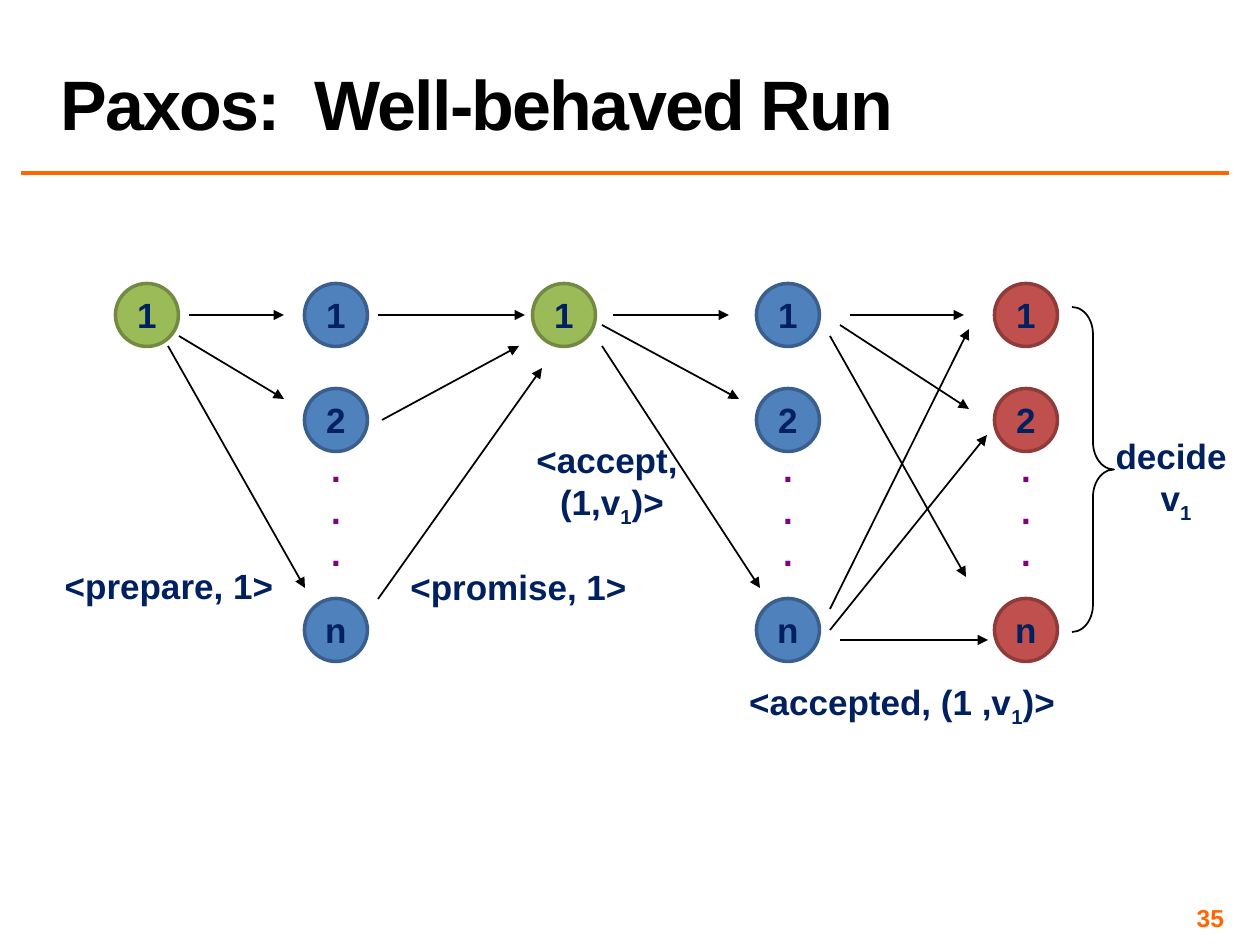
from lxml import etree
from pptx import Presentation
from pptx.dml.color import RGBColor
from pptx.enum.shapes import MSO_CONNECTOR, MSO_SHAPE
from pptx.enum.text import MSO_ANCHOR, MSO_AUTO_SIZE, PP_ALIGN
from pptx.oxml.ns import qn
from pptx.util import Pt

STRAIGHT = MSO_CONNECTOR.STRAIGHT
OVAL, BRACE = MSO_SHAPE.OVAL, MSO_SHAPE.RIGHT_BRACE
TOP, MIDDLE, BOTTOM = MSO_ANCHOR.TOP, MSO_ANCHOR.MIDDLE, MSO_ANCHOR.BOTTOM
LEFT, CENTER, RIGHT = PP_ALIGN.LEFT, PP_ALIGN.CENTER, PP_ALIGN.RIGHT
GROW, FIXED = MSO_AUTO_SIZE.SHAPE_TO_FIT_TEXT, MSO_AUTO_SIZE.NONE

SCALE = 914400 / 126
NAVY, BLACK, ORANGE, PURPLE = "002060", "000000", "FF6600", "800080"
GREEN, BLUE, RED = ("9BBB59", "738A42"), ("4F81BD", "3A5F8C"), ("C0504D", "8E3B39")
DISC = 63
ROWS = {"1": 315, "2": 420, "n": 630}


def emu(*lengths):
    return [round(n * SCALE) for n in lengths]


def color(code):
    return RGBColor.from_string(code)


def assign(target, values):
    for name, value in values.items():
        setattr(target, name, value)


class Board:
    """Holds the text style and the current slide."""

    def __init__(self, slide):
        self.shapes = slide.shapes
        self.font = {"name": "Arial", "size": Pt(20), "bold": True}

    def label(self, shape, lines, code=NAVY, align=CENTER, size=20, track=0,
              space=None, **frame):
        """Fill a shape with lines; the letter after an underscore is a subscript."""
        body = shape.text_frame
        assign(body, frame)
        for i, line in enumerate(lines):
            para = body.paragraphs[0] if i == 0 else body.add_paragraph()
            assign(para, {"alignment": align, "line_spacing": space})
            first, *rest = line.split("_")
            runs = [(first, False)]
            for part in rest:
                runs += [(part[0], True), (part[1:], False)]
            for text, sub in runs:
                if not text:
                    continue
                run = para.add_run()
                run.text = text
                assign(run.font, {**self.font, "size": Pt(size)})
                run.font.color.rgb = color(code)
                props = run._r.get_or_add_rPr()
                if sub:
                    props.set("baseline", "-25000")
                if track:
                    props.set("spc", str(track))

    def text(self, box, *lines, **style):
        frame = {"word_wrap": False, "auto_size": GROW, "vertical_anchor": TOP}
        self.label(self.shapes.add_textbox(*emu(*box)), lines, **{**frame, **style})

    def line(self, start, end, code=BLACK, width=1, head=True):
        link = self.shapes.add_connector(STRAIGHT, *emu(*start, *end))
        link.line.color.rgb = color(code)
        link.line.width = Pt(width)
        if head:
            etree.SubElement(link.line._get_or_add_ln(), qn("a:tailEnd"), type="triangle")
        etree.SubElement(link._element.spPr, qn("a:effectLst"))

    def disc(self, x, y, name, tint):
        """Draw a labelled node centred on x, y."""
        fill, edge = tint
        half = DISC / 2
        node = self.shapes.add_shape(OVAL, *emu(x - half, y - half, DISC, DISC))
        node.shadow.inherit = False
        node.fill.solid()
        node.fill.fore_color.rgb = color(fill)
        node.line.color.rgb = color(edge)
        node.line.width = Pt(2)
        self.label(node, [name], word_wrap=False, vertical_anchor=MIDDLE)

    def column(self, x, tint):
        for name, y in ROWS.items():
            self.disc(x, y, name, tint)
        self.text((x - 21, 441, 42, 139), ".", ".", ".", code=PURPLE, word_wrap=True)

    def brace(self, box):
        shape = self.shapes.add_shape(BRACE, *emu(*box))
        shape.adjustments[0] = 0.65
        shape.shadow.inherit = False
        shape.fill.background()
        shape.line.color.rgb = color(BLACK)
        shape.line.width = Pt(1)


ARROWS = [
    # prepare
    ((189, 315), (284, 315)), ((179, 336), (284, 399)), ((168, 346), (305, 588)),
    # promise
    ((378, 599), (542, 368)), ((382, 420), (519, 346)), ((378, 315), (525, 315)),
    # accept
    ((613, 315), (729, 315)), ((602, 325), (739, 399)), ((602, 346), (760, 588)),
    # accepted
    ((830, 336), (966, 577)), ((840, 325), (969, 409)), ((850, 315), (964, 315)),
    ((840, 640), (988, 640)), ((830, 609), (969, 329)), ((830, 630), (987, 435)),
]


def main():
    deck = Presentation()
    deck.slide_width, deck.slide_height = emu(1260, 945)
    board = Board(deck.slides.add_slide(deck.slide_layouts[6]))

    board.line((21, 173), (1229, 173), ORANGE, 2, head=False)
    inset = emu(5)[0]
    sides = ("left", "right", "top", "bottom")
    board.text((935, 903, 294, 29), "35", code=ORANGE, align=RIGHT, size=14,
               word_wrap=True, auto_size=FIXED, vertical_anchor=MIDDLE,
               **{f"margin_{side}": inset for side in sides})
    board.text((48, 3, 1181, 147), "Paxos:  Well-behaved Run", code=BLACK,
               align=LEFT, size=40, track=-100, space=0.8,
               word_wrap=True, auto_size=FIXED, vertical_anchor=BOTTOM)

    for start, end in ARROWS:
        board.line(start, end)
    for x in (147, 564):
        board.disc(x, ROWS["1"], "1", GREEN)
    for x, tint in ((336, BLUE), (788, BLUE), (1026, RED)):
        board.column(x, tint)

    board.text((51, 558, 236, 55), "<prepare, 1>")
    board.text((397, 559, 243, 55), "<promise, 1>")
    board.text((523, 432, 178, 97), "<accept, ", "(1,v_1)>")
    board.text((735, 674, 334, 55), "<accepted, (1 ,v_1)>")
    board.brace((1072, 307, 42, 325))
    board.text((1077, 428, 198, 97), "decide ", "v_1", word_wrap=True)

    deck.save("out.pptx")


if __name__ == "__main__":
    main()
